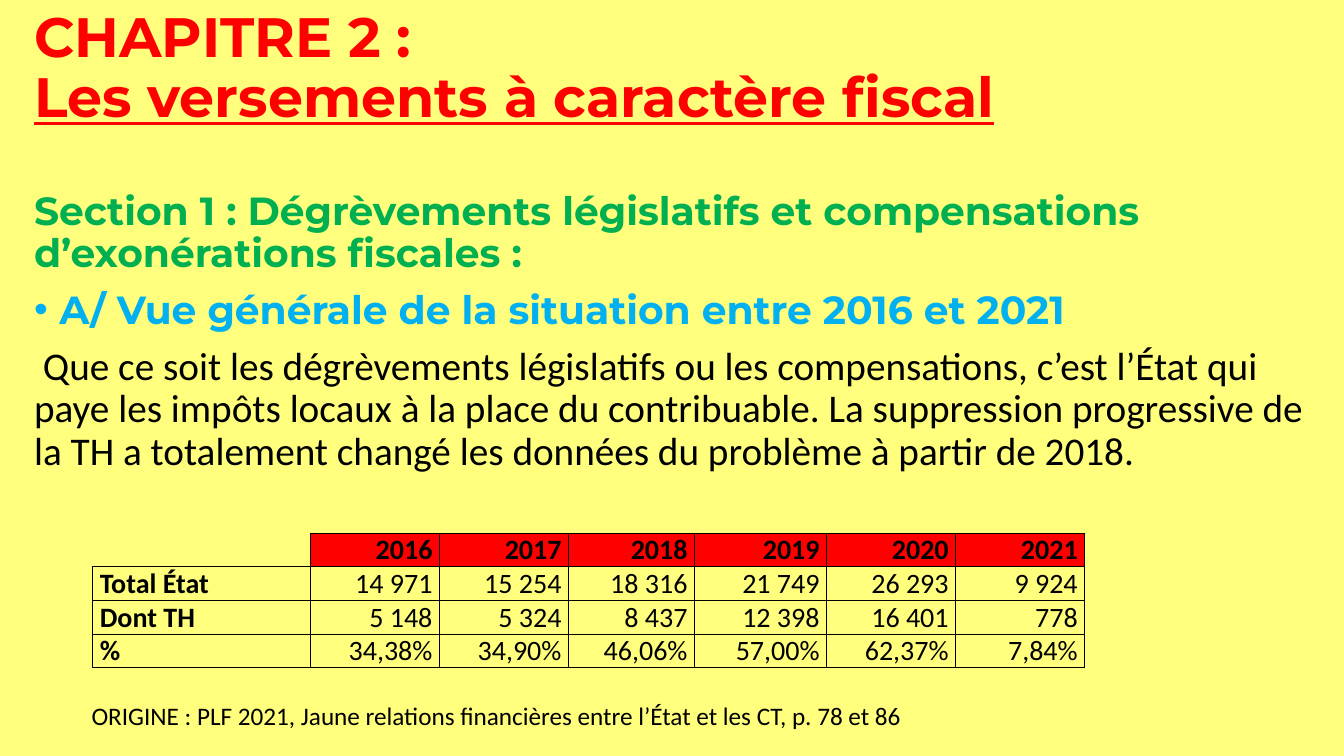
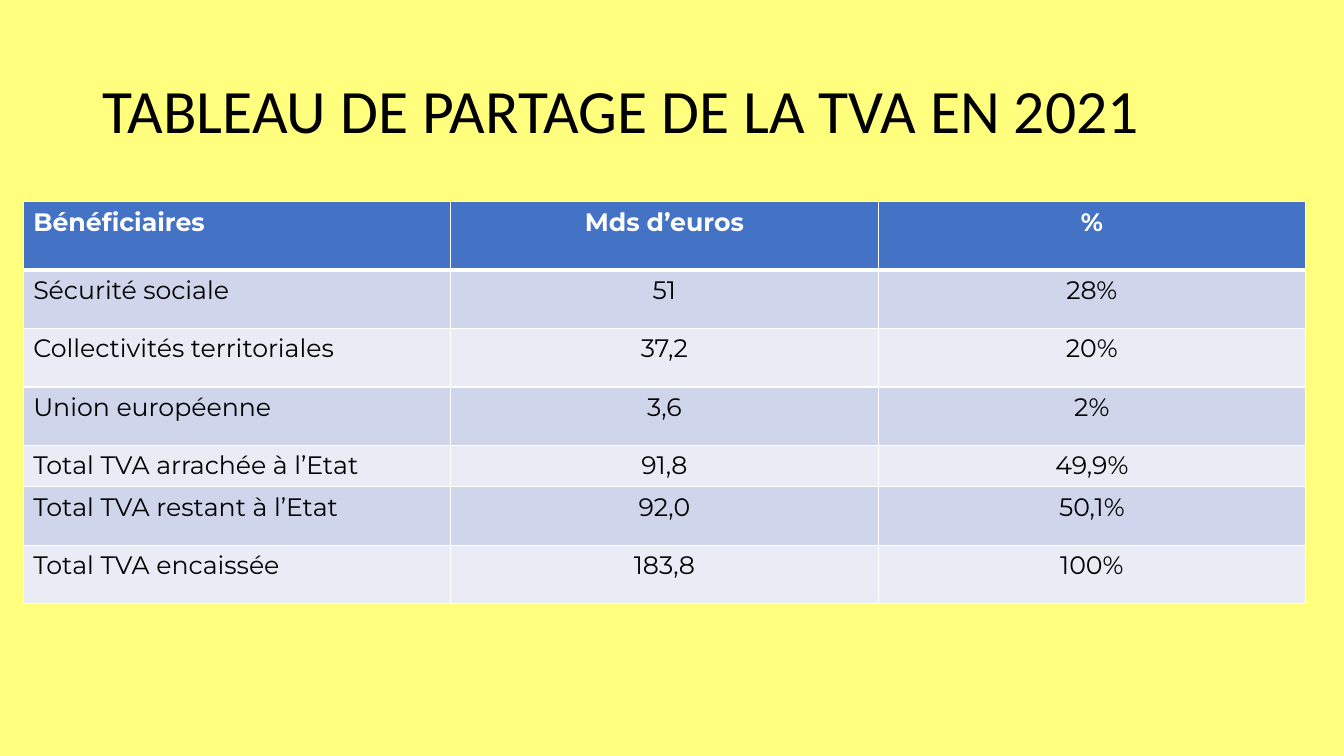
from dataclasses import dataclass

from lxml import etree
from pptx import Presentation
from pptx.dml.color import RGBColor
from pptx.enum import text as t
from pptx.oxml import ns
from pptx.util import Inches, Pt


@dataclass(frozen=True)
class Theme:
    background: str = "FFFF7D"
    black: str = "000000"
    white: str = "FFFFFF"
    red: str = "FF0000"
    green: str = "00B050"
    sky: str = "00B0F0"
    header: str = "4472C4"
    bands: tuple = ("CFD5EA", "E9EBF5")
    plain: str = "Calibri"
    display: str = "Montserrat"
    title: float = 44
    chapter: float = 39.6
    body: float = 28
    figures: float = 20
    small: float = 18


T = Theme()
LEFT, CENTER, RIGHT = t.PP_ALIGN.LEFT, t.PP_ALIGN.CENTER, t.PP_ALIGN.RIGHT

CHAPTER = ("CHAPITRE 2 : ", "Les versements à caractère fiscal")
BODY = [
    ("Section 1 : Dégrèvements législatifs et compensations d’exonérations fiscales :",
     dict(font=T.display, color=T.green, bold=True)),
    ("A/ Vue générale de la situation entre 2016 et 2021",
     dict(font=T.display, color=T.sky, bold=True, bullet=True)),
    (" Que ce soit les dégrèvements législatifs ou les compensations, c’est l’État qui "
     "paye les impôts locaux à la place du contribuable. La suppression progressive de "
     "la TH a totalement changé les données du problème à partir de 2018.", {}),
]
STATE_COSTS = [
    ("", "2016", "2017", "2018", "2019", "2020", "2021"),
    ("Total État", "14 971", "15 254", "18 316", "21 749", "26 293", "9 924"),
    ("Dont TH", "5 148", "5 324", "8 437", "12 398", "16 401", "778"),
    ("%", "34,38%", "34,90%", "46,06%", "57,00%", "62,37%", "7,84%"),
]
STATE_COLS = (2.16, 1.28, 1.28, 1.25, 1.31, 1.28, 1.28)
SOURCE = "ORIGINE\u00a0: PLF 2021, Jaune relations financières entre l’État et les CT, p. 78 et 86"

VAT_TITLE = "TABLEAU DE PARTAGE DE LA TVA EN 2021"
VAT = [
    ("Bénéficiaires", "Mds d’euros", "%"),
    ("Sécurité sociale", "51", "28%"),
    ("Collectivités territoriales", "37,2", "20%"),
    ("Union européenne", "3,6", "2%"),
    ("Total TVA arrachée à l’Etat", "91,8", "49,9%"),
    ("Total TVA restant à l’Etat", "92,0", "50,1%"),
    ("Total TVA encaissée", "183,8", "100%"),
]
VAT_COLS = (4.24,) * 3
VAT_ROWS = (0.68, 0.58, 0.58, 0.58, 0.41, 0.58, 0.58)


def write(p, text, size=T.body, font=T.plain, color=T.black, bold=False,
          underline=False, align=LEFT, spacing=None, before=0, bullet=False):
    """Append a formatted run to paragraph p."""
    p.alignment, p.line_spacing, p.space_before = align, spacing, Pt(before)
    if bullet:
        pPr = p._p.get_or_add_pPr()
        pPr.set("marL", str(Inches(0.25)))
        pPr.set("indent", str(-Inches(0.25)))
        etree.SubElement(pPr, ns.qn("a:buFont")).set("typeface", "Arial")
        etree.SubElement(pPr, ns.qn("a:buChar")).set("char", "•")
    r = p.add_run()
    r.text = text
    r.font.size, r.font.name = Pt(size), font
    r.font.bold, r.font.underline = bold, underline
    r.font.color.rgb = RGBColor.from_string(color)


def add_slide(prs):
    s = prs.slides.add_slide(prs.slide_layouts[6])
    s.background.fill.solid()
    s.background.fill.fore_color.rgb = RGBColor.from_string(T.background)
    return s


def add_box(s, at, anchor=t.MSO_ANCHOR.TOP, wrap=True):
    tf = s.shapes.add_textbox(*map(Inches, at)).text_frame
    tf.word_wrap, tf.vertical_anchor = wrap, anchor
    return tf


def set_borders(cell, color, **widths):
    """Draw cell sides L, R, T, B in points; a width of 0 removes the line."""
    tcPr = cell._tc.get_or_add_tcPr()
    for i, side in enumerate("LRTB"):
        width = widths.get(side, 1)
        ln = etree.Element(ns.qn(f"a:ln{side}"), w=str(Pt(width)))
        if width:
            fill = etree.SubElement(ln, ns.qn("a:solidFill"))
            etree.SubElement(fill, ns.qn("a:srgbClr")).set("val", color)
        else:
            etree.SubElement(ln, ns.qn("a:noFill"))
        tcPr.insert(i, ln)


def add_table(s, left, top, cols, heights, rows, style):
    """Build a table; style(row, column) gives fill, border and text formats."""
    table = s.shapes.add_table(len(rows), len(cols), Inches(left), Inches(top),
                               Inches(sum(cols)), Inches(sum(heights))).table
    table.horz_banding = False
    for column, width in zip(table.columns, cols):
        column.width = Inches(width)
    for i, (row, height) in enumerate(zip(rows, heights)):
        table.rows[i].height = Inches(height)
        for j, value in enumerate(row):
            cell = table.cell(i, j)
            fill, borders, fmt = style(i, j)
            if fill:
                cell.fill.solid()
                cell.fill.fore_color.rgb = RGBColor.from_string(fill)
            else:
                cell.fill.background()
            set_borders(cell, **borders)
            write(cell.text_frame.paragraphs[0], value, **fmt)
    return table


def state_style(i, j):
    corner = i == j == 0
    borders = dict(color=T.black, **(dict(L=0, T=0) if corner else {}))
    fmt = dict(size=T.figures, bold=i == 0 or j == 0, align=RIGHT if j else LEFT)
    return T.red if i == 0 and j else None, borders, fmt


def vat_style(i, j):
    head = i == 0
    borders = dict(color=T.white, B=3 if head else 1, T=3 if i == 1 else 1)
    fmt = dict(size=T.small, font=T.display, bold=head,
               color=T.white if head else T.black, align=CENTER if j else LEFT)
    return T.header if head else T.bands[(i - 1) % 2], borders, fmt


def chapter_slide(prs):
    s = add_slide(prs)
    tf = add_box(s, (0.24, 0.1, 12.7, 1.75))
    tf.margin_top = 0
    p = tf.paragraphs[0]
    heading = dict(size=T.chapter, font=T.display, color=T.red, bold=True, spacing=0.9)
    write(p, CHAPTER[0], **heading)
    p.add_line_break()
    write(p, CHAPTER[1], underline=True, **heading)

    tf = add_box(s, (0.24, 1.85, 12.95, 4.91))
    for i, (text, fmt) in enumerate(BODY):
        p = tf.add_paragraph() if i else tf.paragraphs[0]
        write(p, text, spacing=0.9, before=10, **fmt)

    table = add_table(s, 0.92, 5.29, STATE_COLS, (0.33,) * 4, STATE_COSTS, state_style)
    for cell in table.iter_cells():
        cell.margin_left = cell.margin_right = Inches(0.07)
        cell.margin_top = cell.margin_bottom = 0

    tf = add_box(s, (0.81, 6.9, 8.52, 0.4), wrap=False)
    write(tf.paragraphs[0], SOURCE, size=T.small)


def vat_slide(prs):
    s = add_slide(prs)
    tf = add_box(s, (0.92, 0.4, 11.5, 1.45), anchor=t.MSO_ANCHOR.MIDDLE)
    write(tf.paragraphs[0], VAT_TITLE, size=T.title, spacing=0.9)
    add_table(s, 0.23, 2, VAT_COLS, VAT_ROWS, VAT, vat_style)


def main():
    prs = Presentation()
    prs.slide_width, prs.slide_height = Inches(13.33), Inches(7.5)
    chapter_slide(prs)
    vat_slide(prs)
    prs.save("out.pptx")


if __name__ == "__main__":
    main()
